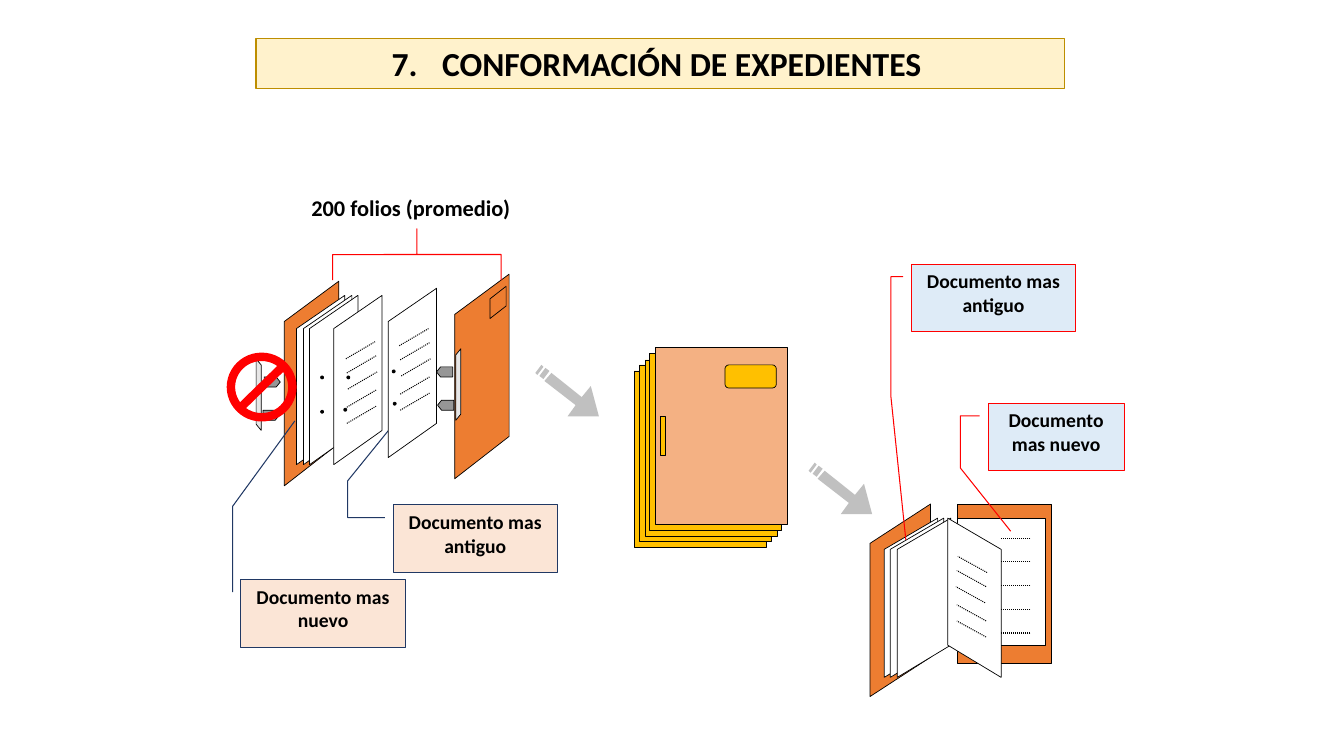
from lxml import etree
from pptx import Presentation
from pptx.dml.color import RGBColor
from pptx.enum import dml, shapes, text
from pptx.oxml import ns
from pptx.util import Inches, Pt

C = {"black": "000000", "white": "FFFFFF", "orange": "ED7D31", "amber": "FFC000",
     "salmon": "F4B183", "silver": "C0C0C0", "steel": "969696", "metal": "E7E6E6",
     "red": "FF0000", "navy": "203864", "peach": "FBE5D6", "sky": "DEEBF7",
     "cream": "FFF2CC", "gold": "BD8E00"}
C = {name: RGBColor.from_string(value) for name, value in C.items()}
KIND = shapes.MSO_SHAPE

prs = Presentation()
prs.slide_width, prs.slide_height = Inches(13.33), Inches(7.5)
slide = prs.slides.add_slide(prs.slide_layouts[6])


def draw(outline, box=None, fill=None, line="black", width=0.5, adj=(), rot=0, flip=False):
    """Add a preset shape in a box, or a polygon when outline is a list of points."""
    if box:
        s = slide.shapes.add_shape(outline, *map(Inches, box))
    else:
        points = [(Inches(x), Inches(y)) for x, y in outline]
        builder = slide.shapes.build_freeform(*points[0])
        builder.add_line_segments(points[1:], close=True)
        s = builder.convert_to_shape()
    s.shadow.inherit = False
    if fill:
        s.fill.solid()
        s.fill.fore_color.rgb = C[fill]
    else:
        s.fill.background()
    if line:
        s.line.color.rgb = C[line]
        s.line.width = Pt(width)
    else:
        s.line.fill.background()
    for i, value in enumerate(adj):
        s.adjustments[i] = value
    s.rotation = rot
    if flip:
        s._element.spPr.get_or_add_xfrm().set("flipH", "1")
    return s


def panel(x, y, w, h, drop, rise):
    """Corners of a sheet seen at an angle, with its near edge at x."""
    return [(x, y + drop), (x, y + h), (x + w, y + h - rise), (x + w, y)]


COVER = (0.54, 2.03, 0.4, 0.42)
SHEET = (0.48, 1.68, 0.33, 0.34)
BOOK_COVER = (0.6, 1.91, 0.39, 0.39)
BOOK_PAGE = (0.53, 1.58, 0.31, 0.32)
dotted = []
labels = []

# Closed stack of folders
for x, y in [(6.29, 3.68), (6.34, 3.62), (6.4, 3.57), (6.44, 3.51)]:
    draw(KIND.RECTANGLE, (x, y, 1.31, 1.75), "amber")
draw(KIND.RECTANGLE, (6.5, 3.45, 1.31, 1.75), "salmon")
draw(KIND.RECTANGLE, (6.55, 4.13, 0.05, 0.39), "amber")
draw(KIND.ROUNDED_RECTANGLE, (7.19, 3.62, 0.51, 0.23), "amber", adj=[0.17])

# Striped arrows between the stages
arrow = [
    [(0.55, 0.21), (0.46, 0.32), (0.16, 0.08), (0.09, 0.16),
     (0.4, 0.4), (0.32, 0.51), (0.63, 0.51)],
    [(0.1, 0.03), (0.04, 0.11), (0.08, 0.14), (0.14, 0.06)],
    [(0.06, 0), (0, 0.08), (0.02, 0.1), (0.08, 0.02)],
]
for left, top in [(8.02, 4.59), (5.31, 3.62)]:
    for piece in arrow:
        draw([(left + x, top + y) for x, y in piece], fill="silver", line=None)

# Open folder with its fastener
draw(panel(2.82, 2.79, *COVER), fill="orange")
for x in (2.94, 3.01, 3.07):
    draw(panel(x, 2.93, *SHEET), fill="white")
for y in (4.07, 3.73):
    draw(KIND.OVAL, (3.18, y, 0.03, 0.03), "black")
draw(panel(4.51, 2.72, *COVER), fill="orange")
draw(KIND.PARALLELOGRAM, (4.78, 2.92, 0.32, 0.16), "orange", adj=[0.779], rot=270, flip=True)
for x, y, side in [(4.5, 3.97, -1), (4.49, 3.64, -1), (2.61, 4.07, 1), (2.62, 3.74, 1)]:
    neck, tip = x + side * 0.12, x + side * 0.16
    draw([(neck, y), (x, y), (x, y + 0.1), (neck, y + 0.1), (tip, y + 0.05)], fill="steel")
for x, y, rot in [(4.19, 3.79, 270), (2.21, 3.89, 90)]:
    draw(KIND.PARALLELOGRAM, (x, y, 0.71, 0.05), "metal", adj=[1.227],
         rot=rot, flip=rot == 270)

# Callouts; their leaders run behind the loose sheets
callouts = [
    ("Documento mas nuevo", (2.39, 5.75, 1.63, 0.67), "peach", "navy",
     [0.188, 1.051, 0.188, 1.051, -1.083, 1.051, -2.349, 0.672]),
    ("Documento mas antiguo", (3.9, 5.01, 1.63, 0.67), "peach", "navy",
     [0.188, 1.051, 0.188, 1.277, -0.357, 1.277, -1.174, 1.005]),
    ("Documento mas nuevo", (9.8, 4, 1.35, 0.67), "sky", "red",
     [0.188, 1.062, 0.188, 1.203, 0.961, 1.203, 1.896, 0.834]),
    ("Documento mas antiguo", (9.04, 2.62, 1.63, 0.67), "sky", "red",
     [0.188, 1.051, 0.188, 1.125, 1.958, 1.125, 4.083, 1.034]),
]


# Loose sheets: left, top, holes, first written line
loose_sheets = [
    (3.85, 2.86, [(3.9, 3.99), (3.89, 3.67)], 3.96, 3.43),
    (3.31, 2.93, [(3.41, 4.05), (3.44, 3.73)], 3.43, 3.56),
]
line_steps = [(0, 0), (0.01, 0.14), (0.02, 0.3), (0.01, 0.48), (0.01, 0.64)]

# Open book
book = [
    (KIND.RECTANGLE, (9.5, 5, 0.93, 1.58), "orange"),
    (panel(8.63, 5, *BOOK_COVER), None, "orange"),
    *[(panel(x, 5.14, *BOOK_PAGE), None, "white") for x in (8.77, 8.83, 8.9)],
    (KIND.RECTANGLE, (9.5, 5.14, 0.87, 1.26), "white"),
    (panel(9.93, 5.14, -0.53, *BOOK_PAGE[1:]), None, "white"),
]
for outline, box, fill in book:
    draw(outline, box, fill)
for i, (dx, dy) in enumerate(line_steps):
    dotted.append((9.79 - dx, 5.68 + dy, 9.5 - dx, 5.52 + dy))
    y = 5.34 + i * 0.235
    dotted.append((10.22, y, 9.93, y))

for words, box, fill, line, adj in callouts:
    s = draw(KIND.LINE_CALLOUT_3, box, fill, line, 0.75, adj, flip=True)
    s.text_frame.vertical_anchor = text.MSO_ANCHOR.TOP
    labels.append((s, words, 14, text.PP_ALIGN.CENTER))

for left, top, holes, line_x, line_y in loose_sheets:
    draw(panel(left, top, *SHEET), fill="white")
    for x, y in holes:
        draw(KIND.OVAL, (x, y, 0.03, 0.03), "black")
    for dx, dy in line_steps:
        x, y = line_x + dx, line_y + dy
        dotted.append((x, y, x + 0.29, y - 0.17))

# Brace and its label
draw(KIND.LEFT_BRACE, (3.88, 1.69, 0.51, 1.67), line="red", width=0.75, adj=[0, 0.5], rot=90)
s = slide.shapes.add_textbox(*map(Inches, (2.99, 1.88, 2.2, 0.37)))
labels.append((s, "200 folios (promedio)", 16, text.PP_ALIGN.LEFT))

# Prohibition sign and written lines
draw(KIND.OVAL, (2.29, 3.54, 0.61, 0.6), line="red", width=6)
strokes = [(ends, "black", 0.75, dml.MSO_LINE.ROUND_DOT) for ends in dotted]
strokes.append(((2.39, 4.04, 2.81, 3.63), "red", 6, None))
for ends, color, width, dash in strokes:
    s = slide.shapes.add_connector(shapes.MSO_CONNECTOR.STRAIGHT, *map(Inches, ends))
    s.line.color.rgb = C[color]
    s.line.width = Pt(width)
    s.line.dash_style = dash
    etree.SubElement(s._element.spPr, ns.qn("a:effectLst"))

s = draw(KIND.RECTANGLE, (2.54, 0.38, 8.02, 0.5), "cream", "gold", 1)
labels.append((s, "7.\tCONFORMACIÓN DE EXPEDIENTES ", 24, text.PP_ALIGN.CENTER))

for s, words, size, align in labels:
    tf = s.text_frame
    tf.word_wrap = size != 16
    p = tf.paragraphs[0]
    p.text = words
    p.alignment = align
    p.font.name, p.font.size, p.font.bold = "Calibri", Pt(size), True
    p.font.color.rgb = C["black"]

prs.save("out.pptx")
